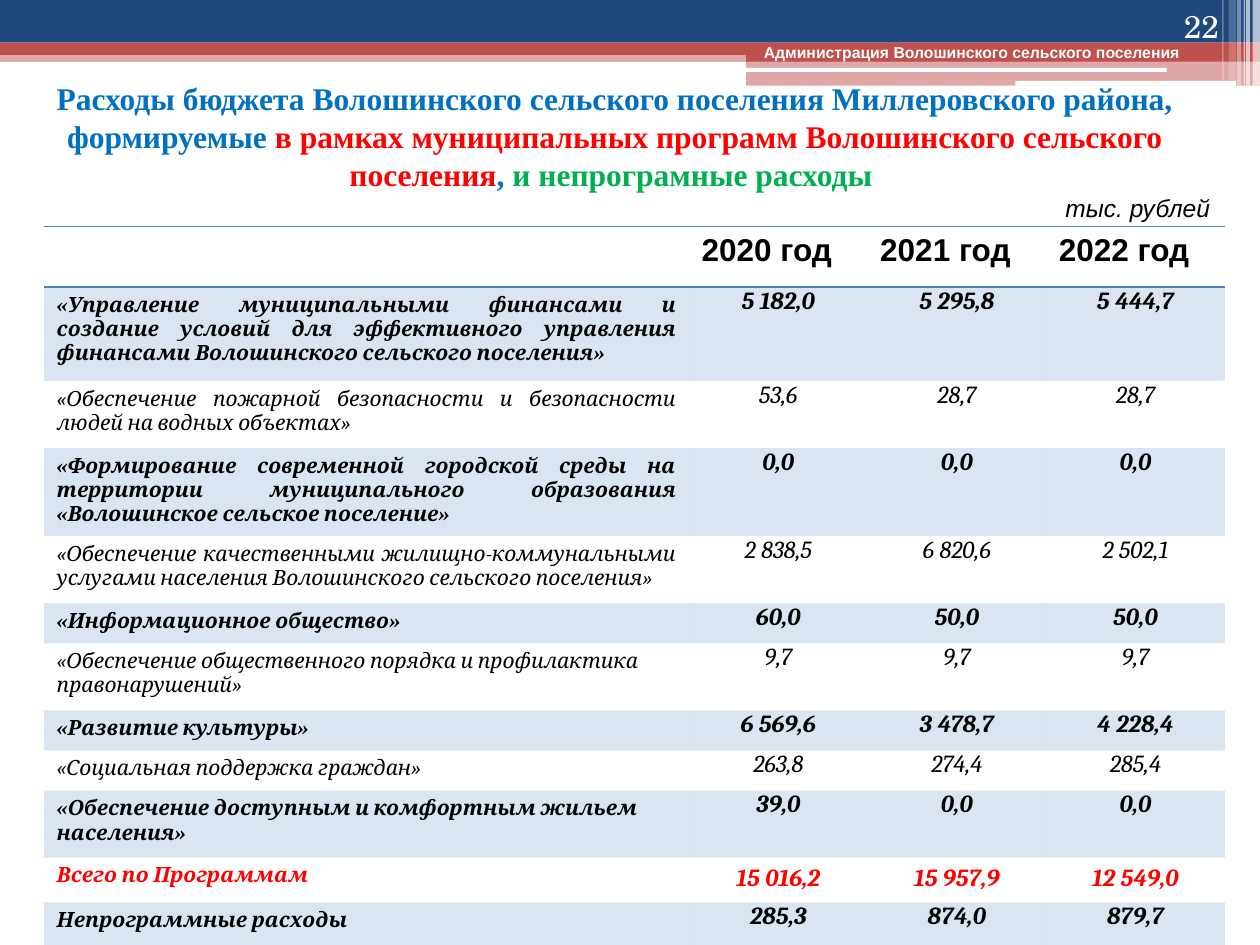
from lxml.etree import SubElement
from pptx import Presentation
from pptx.dml.color import RGBColor
from pptx.enum.shapes import MSO_SHAPE
from pptx.enum.text import MSO_ANCHOR, MSO_AUTO_SIZE, PP_ALIGN
from pptx.oxml import parse_xml
from pptx.oxml.ns import nsdecls, qn
from pptx.util import Cm, Pt

COLORS = {
    "navy": "1F497D", "brick": "C0504D", "white": "FFFFFF", "black": "000000",
    "blue": "0070C0", "red": "FF0000", "green": "00B050", "table": "4F81BD",
}
PLAIN_TABLE = "{2D5ABB26-0587-4C30-8999-92F81FD0307C}"


def write(p, text, font="Arial", size=14, color="black", bold=False,
          italic=False, align=PP_ALIGN.LEFT):
    p.alignment = align
    r = p.add_run()
    r.text = text
    r.font.name, r.font.size = font, Pt(size)
    r.font.bold, r.font.italic = bold, italic
    r.font.color.rgb = RGBColor.from_string(COLORS[color])


def paint(fill, element, color, opacity=100):
    fill.solid()
    fill.fore_color.rgb = RGBColor.from_string(COLORS[color])
    if opacity < 100:
        clr = element.find(qn("a:solidFill")).find(qn("a:srgbClr"))
        SubElement(clr, qn("a:alpha"), val=str(opacity * 1000))


prs = Presentation()
prs.slide_width, prs.slide_height = Cm(25.4), Cm(19.05)
s = prs.slides.add_slide(prs.slide_layouts[5])

# Header bands, white rules and the stripes in the corner
RECT, ROUND = MSO_SHAPE.RECTANGLE, MSO_SHAPE.ROUNDED_RECTANGLE
bars = [
    (RECT, 0, 1.02, 25.4, 0.23, "brick", 50),
    (RECT, 0, 0, 25.4, 0.86, "navy", 100),
    (RECT, 0, 0.86, 25.4, 0.25, "brick", 100),
    (RECT, 15.04, 0.99, 10.36, 0.25, "brick", 100),
    (RECT, 15.04, 1.22, 10.36, 0.51, "brick", 50),
    (ROUND, 15.01, 1.37, 8.51, 0.08, "white", 100),
    (ROUND, 20.47, 1.63, 4.45, 0.1, "white", 100),
    (RECT, 25.25, 0, 0.15, 1.73, "white", 65),
    (RECT, 25.12, 0, 0.08, 1.73, "white", 65),
    (RECT, 25.07, 0, 0.03, 1.73, "white", 60),
    (RECT, 24.94, 0, 0.08, 1.73, "white", 40),
    (RECT, 24.77, 0, 0.15, 1.63, "white", 20),
    (RECT, 24.64, 0, 0.03, 1.63, "white", 30),
]
for kind, x, y, w, h, color, opacity in bars:
    sp = s.shapes.add_shape(kind, Cm(x), Cm(y), Cm(w), Cm(h))
    sp.shadow.inherit = False
    sp.line.fill.background()
    paint(sp.fill, sp.element.spPr, color, opacity)

# Title
title = s.shapes.title
title.left, title.top, title.width, title.height = Cm(0), Cm(1.52), Cm(24.79), Cm(2.44)
tf = title.text_frame
tf.word_wrap, tf.auto_size = True, MSO_AUTO_SIZE.NONE
tf.vertical_anchor = MSO_ANCHOR.MIDDLE
for text, color in [
    ("Расходы бюджета Волошинского сельского поселения Миллеровского района, формируемые ", "blue"),
    ("в рамках муниципальных программ Волошинского сельского поселения", "red"),
    (", ", "blue"),
    ("и непрограмные расходы ", "green"),
]:
    write(tf.paragraphs[0], text, font="Times New Roman", size=18, color=color,
          bold=True, align=PP_ALIGN.CENTER)

# Page number, unit and name of the administration
labels = [
    ("22", 22.71, 0, 2.11, 1.02, MSO_ANCHOR.BOTTOM,
     dict(font="TeX Gyre Schola", size=18, color="white", align=PP_ALIGN.RIGHT)),
    ("тыс. рублей", 21.23, 3.76, 3.61, 0.86, MSO_ANCHOR.TOP, dict(italic=True)),
    ("Администрация Волошинского сельского поселения", 14.48, 0.74, 10.21, 0.64,
     MSO_ANCHOR.TOP, dict(size=9, color="white", bold=True, align=PP_ALIGN.CENTER)),
]
for text, x, y, w, h, anchor, fmt in labels:
    tf = s.shapes.add_textbox(Cm(x), Cm(y), Cm(w), Cm(h)).text_frame
    tf.word_wrap, tf.vertical_anchor = True, anchor
    write(tf.paragraphs[0], text, **fmt)

# Expenditure table: row height in cm, then the cells
rows = [
    (1.22, "", "2020 год", "2021 год", "2022 год"),
    (1.89, "«Управление муниципальными финансами и создание условий для эффективного "
           "управления финансами Волошинского сельского поселения»",
     "5 182,0", "5 295,8", "5 444,7"),
    (1.35, "«Обеспечение пожарной безопасности и безопасности людей на водных объектах»",
     "53,6", "28,7", "28,7"),
    (1.71, "«Формирование современной городской среды на территории муниципального "
           "образования «Волошинское сельское поселение»", "0,0", "0,0", "0,0"),
    (1.35, "«Обеспечение качественными жилищно-коммунальными услугами населения "
           "Волошинского сельского поселения»", "2 838,5", "6 820,6", "2 502,1"),
    (0.81, "«Информационное общество»", "60,0", "50,0", "50,0"),
    (1.35, "«Обеспечение общественного порядка и профилактика правонарушений»",
     "9,7", "9,7", "9,7"),
    (0.81, "«Развитие культуры»", "6 569,6", "3 478,7", "4 228,4"),
    (0.81, "«Социальная поддержка граждан»", "263,8", "274,4", "285,4"),
    (1.35, "«Обеспечение доступным и комфортным жильем населения»", "39,0", "0,0", "0,0"),
    (0.9, "Всего по Программам", "15 016,2", "15 957,9", "12 549,0"),
    (0.9, "Непрограммные расходы", "285,3", "874,0", "879,7"),
]
TOTAL, LAST = len(rows) - 2, len(rows) - 1
widths = [13, 3.6, 3.6, 3.6]
gf = s.shapes.add_table(len(rows), len(widths), Cm(0.89), Cm(4.57),
                        Cm(sum(widths)), Cm(sum(row[0] for row in rows)))
table = gf.table
table.first_row = table.horz_banding = False
next(gf.element.iter(qn("a:tableStyleId"))).text = PLAIN_TABLE
for column, width in zip(table.columns, widths):
    column.width = Cm(width)

for i, (height, *texts) in enumerate(rows):
    table.rows[i].height = Cm(height)
    for j, text in enumerate(texts):
        cell = table.cell(i, j)
        tcPr = cell._tc.get_or_add_tcPr()
        if i % 2:
            paint(cell.fill, tcPr, "table", 20)
        else:
            cell.fill.background()

        # Rules above and below the header and under the last row
        edges = {0: ["lnB", "lnT"], LAST: ["lnB"]}.get(i, [])
        for edge in edges:
            tcPr.insert(0, parse_xml(
                f'<a:{edge} {nsdecls("a")} w="12700"><a:solidFill>'
                f'<a:srgbClr val="{COLORS["table"]}"/></a:solidFill></a:{edge}>'))

        p = cell.text_frame.paragraphs[0]
        if i == 0:
            if text:
                write(p, text, size=18, bold=True)
            continue
        if j == 0:
            align = PP_ALIGN.JUSTIFY if i <= 4 else PP_ALIGN.LEFT
        else:
            align = PP_ALIGN.CENTER
            if i != TOTAL:
                cell.margin_left = cell.margin_right = Cm(0.18)
                cell.margin_top = cell.margin_bottom = Cm(0)
        write(p, text, font="Cambria", size=14 if j else 12, italic=True,
              bold=i % 2 == 1 or i == TOTAL, align=align,
              color="red" if i == TOTAL else "black")

prs.save("out.pptx")
